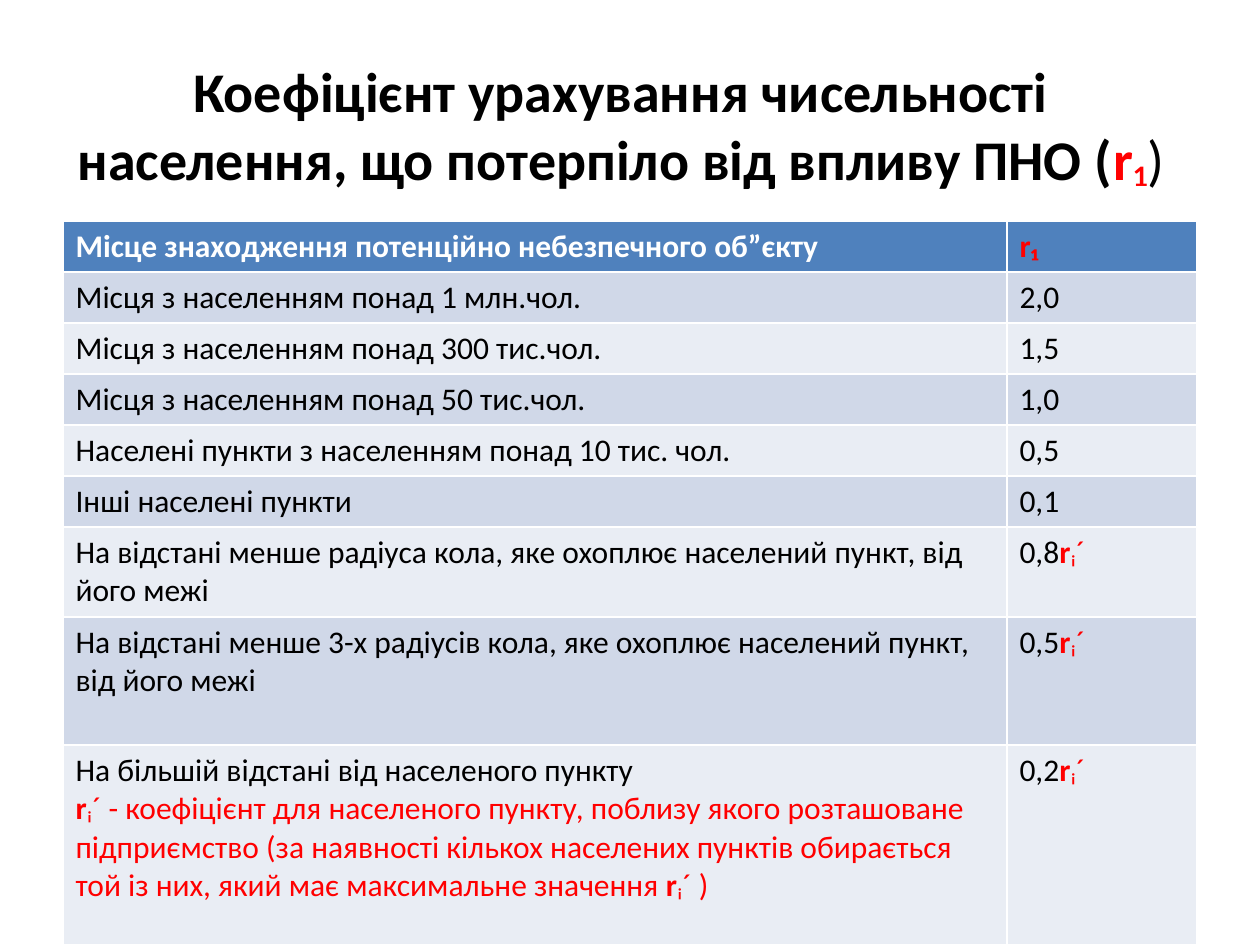
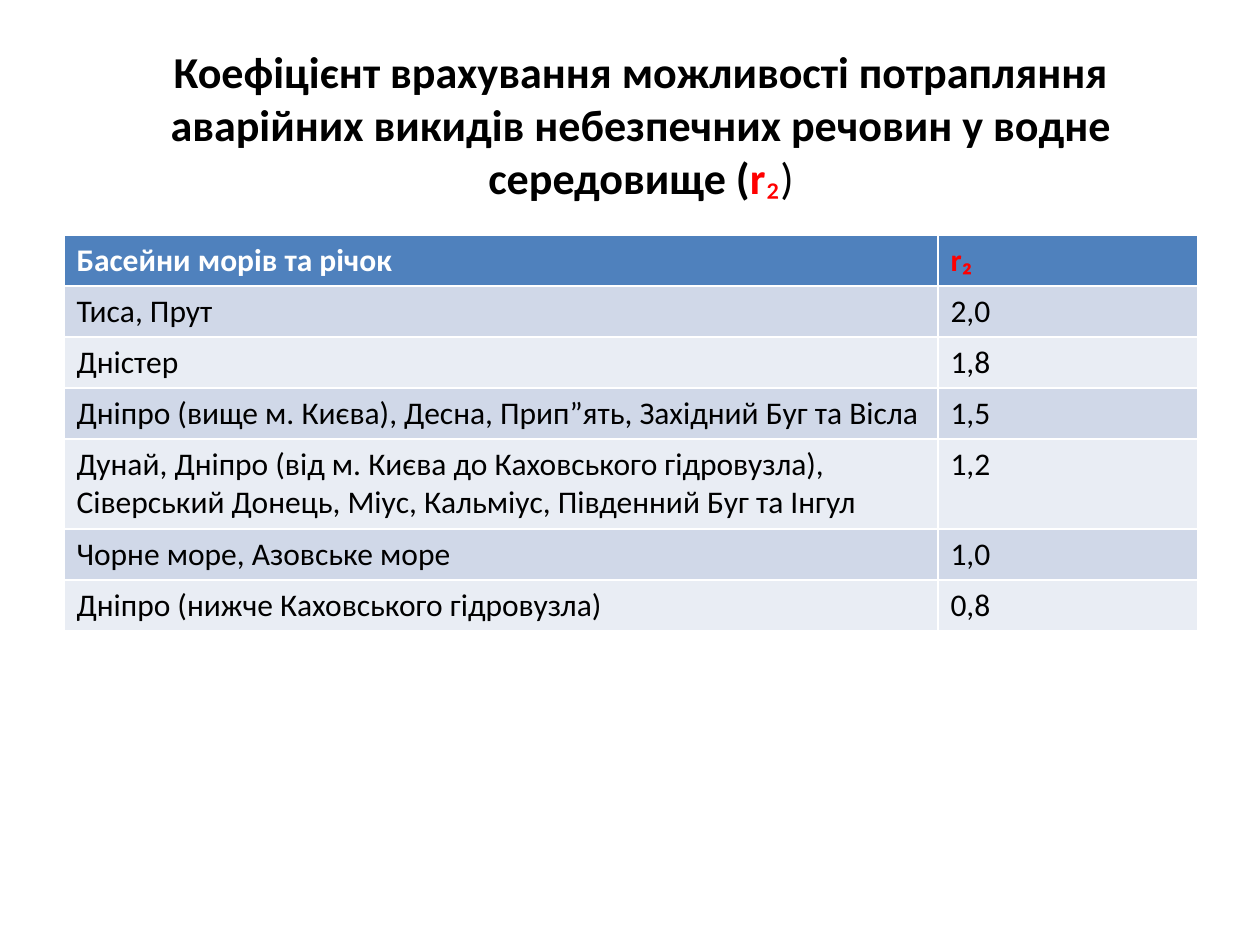
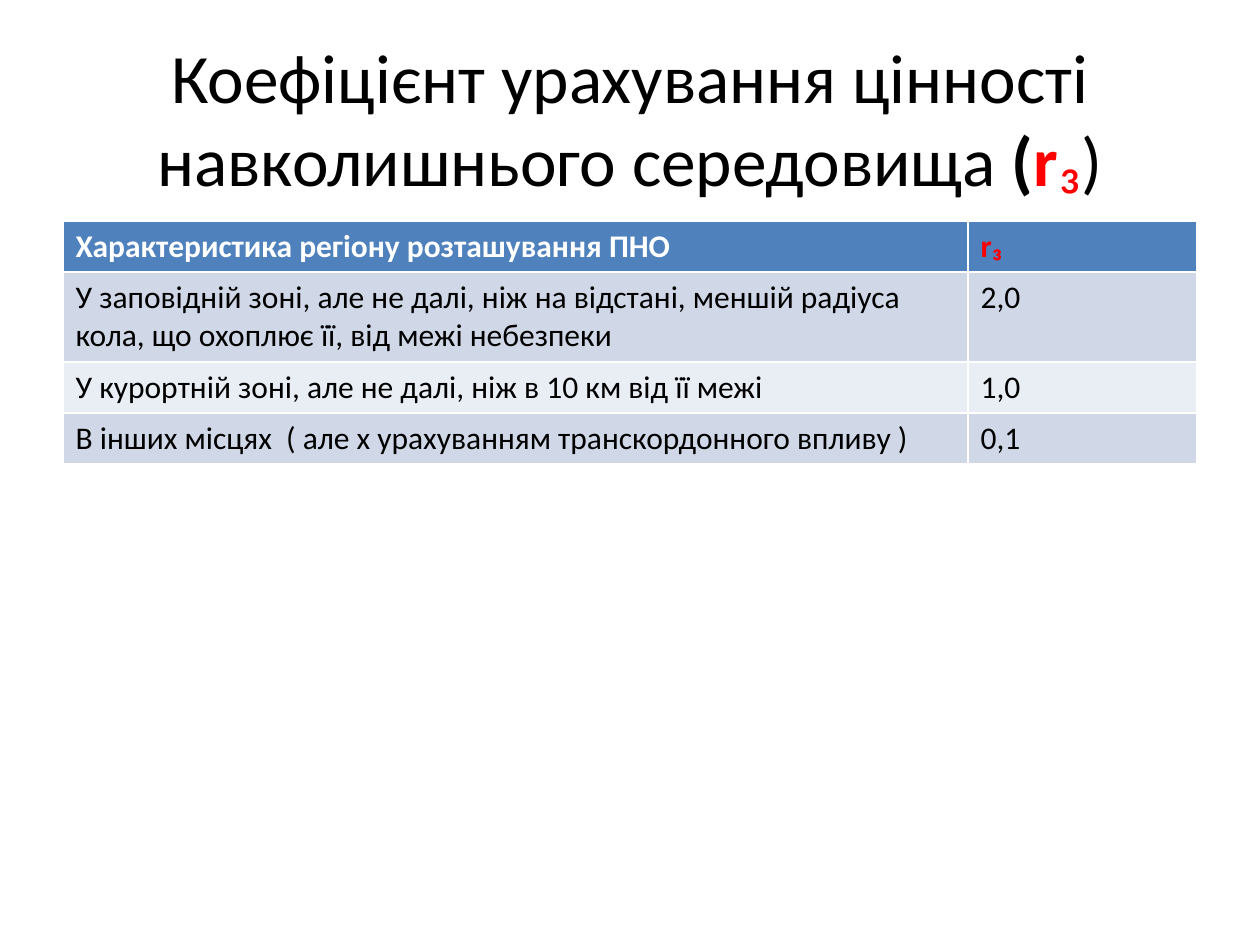
import pptx
import pptx.util
import pptx.dml.color
import pptx.enum.text

RGB = pptx.dml.color.RGBColor
BLACK = RGB(0x00, 0x00, 0x00)
WHITE = RGB(0xFF, 0xFF, 0xFF)
RED = RGB(0xFF, 0x00, 0x00)
HEAD = RGB(0x4F, 0x81, 0xBD)
BANDS = [RGB(0xE9, 0xED, 0xF4), RGB(0xD0, 0xD8, 0xE8)]
FONT = "Calibri"
SCALE = 914400 / 126
WIDTH = 1134
TITLE_HIGH = 158
ROW = 51
TWO_LINES = 90


def px(count):
    return pptx.util.Emu(round(count * SCALE))


def write(frame, lines, size):
    """Fill a frame with lines, each a list of (text, colour, bold) runs."""
    for num, line in enumerate(lines):
        para = frame.add_paragraph() if num else frame.paragraphs[0]
        for text, color, bold in line:
            run = para.add_run()
            run.text = text
            run.font.name = FONT
            run.font.size = pptx.util.Pt(size)
            run.font.bold = bold
            run.font.color.rgb = color


R = ("r", RED, True)
PRIME = ("ᵢ´", RED, False)
NOTE = [
    R,
    ("ᵢ´ - коефіцієнт для населеного пункту, поблизу якого розташоване "
     "підприємство (за наявності кількох населених пунктів обирається "
     "той із них, який має максимальне значення ", RED, False),
    R,
    ("ᵢ´ )", RED, False),
]

# Rows are (height, place, factor, factor depends on nearby town, note lines)
SLIDES = [
    {
        "title": [("Коефіцієнт урахування чисельності населення, "
                   "що потерпіло від впливу ПНО (", BLACK, True)],
        "size": 32, "title_at": (54, 45), "table_at": (63, 221),
        "split": 944, "sign": "₁",
        "head": "Місце знаходження потенційно небезпечного об”єкту",
        "rows": [
            (ROW, "Місця з населенням понад 1 млн.чол.", "2,0", False, []),
            (ROW, "Місця з населенням понад 300 тис.чол.", "1,5", False, []),
            (ROW, "Місця з населенням понад 50 тис.чол.", "1,0", False, []),
            (ROW, "Населені пункти з населенням понад 10 тис. чол.", "0,5", False, []),
            (ROW, "Інші населені пункти", "0,1", False, []),
            (TWO_LINES, "На відстані менше радіуса кола, яке охоплює "
             "населений пункт, від його межі", "0,8", True, []),
            (128, "На відстані менше 3-х радіусів кола, яке охоплює "
             "населений пункт, від його межі", "0,5", True, []),
            (200, "На більшій відстані від населеного пункту", "0,2", True, [NOTE]),
        ],
    },
    {
        "title": [("Коефіцієнт врахування можливості потрапляння аварійних "
                   "викидів небезпечних речовин у водне середовище (", BLACK, True)],
        "size": 25.2, "title_at": (74, 45), "table_at": (64, 235),
        "split": 874, "sign": "₂",
        "head": "Басейни морів та річок",
        "rows": [
            (ROW, "Тиса, Прут", "2,0", False, []),
            (ROW, "Дністер", "1,8", False, []),
            (ROW, "Дніпро (вище м. Києва), Десна, Прип”ять, "
             "Західний Буг та Вісла", "1,5", False, []),
            (TWO_LINES, "Дунай, Дніпро (від м. Києва до Каховського гідровузла), "
             "Сіверський Донець, Міус, Кальміус, Південний Буг та Інгул",
             "1,2", False, []),
            (ROW, "Чорне море, Азовське море", "1,0", False, []),
            (ROW, "Дніпро (нижче Каховського гідровузла)", "0,8", False, []),
        ],
    },
    {
        "title": [("Коефіцієнт урахування цінності навколишнього середовища",
                   BLACK, False), (" (", BLACK, True)],
        "size": 39.6, "title_at": (63, 38), "table_at": (63, 221),
        "split": 905, "sign": "₃",
        "head": "Характеристика регіону розташування ПНО",
        "rows": [
            (TWO_LINES, "У заповідній зоні, але не далі, ніж на відстані, меншій "
             "радіуса кола, що охоплює її, від межі небезпеки", "2,0", False, []),
            (ROW, "У курортній зоні, але не далі, ніж в 10 км від її межі",
             "1,0", False, []),
            (ROW, "В інших місцях  ( але х урахуванням транскордонного впливу )",
             "0,1", False, []),
        ],
    },
]

deck = pptx.Presentation()
deck.slide_width = px(1260)
deck.slide_height = px(945)

for data in SLIDES:
    slide = deck.slides.add_slide(deck.slide_layouts[6])

    left, top = data["title_at"]
    frame = slide.shapes.add_textbox(px(left), px(top), px(WIDTH), px(TITLE_HIGH)).text_frame
    frame.word_wrap = True
    frame.vertical_anchor = pptx.enum.text.MSO_ANCHOR.MIDDLE
    frame.paragraphs[0].alignment = pptx.enum.text.PP_ALIGN.CENTER
    sign = [R, (data["sign"], RED, False), (")", BLACK, False)]
    write(frame, [data["title"] + sign], data["size"])

    grid = [(ROW, [[(data["head"], WHITE, True)]], [[("r" + data["sign"], RED, True)]])]
    for high, place, factor, nearby, notes in data["rows"]:
        value = [(factor, BLACK, False)] + ([R, PRIME] if nearby else [])
        grid.append((high, [[(place, BLACK, False)]] + notes, [value]))

    left, top = data["table_at"]
    total = sum(high for high, *cells in grid)
    table = slide.shapes.add_table(
        len(grid), 2, px(left), px(top), px(WIDTH), px(total)).table
    table.columns[0].width = px(data["split"])
    table.columns[1].width = px(WIDTH - data["split"])
    for row, (high, *cells) in enumerate(grid):
        table.rows[row].height = px(high)
        for col, lines in enumerate(cells):
            cell = table.cell(row, col)
            cell.fill.solid()
            cell.fill.fore_color.rgb = BANDS[row % 2] if row else HEAD
            write(cell.text_frame, lines, 18)

deck.save("out.pptx")
